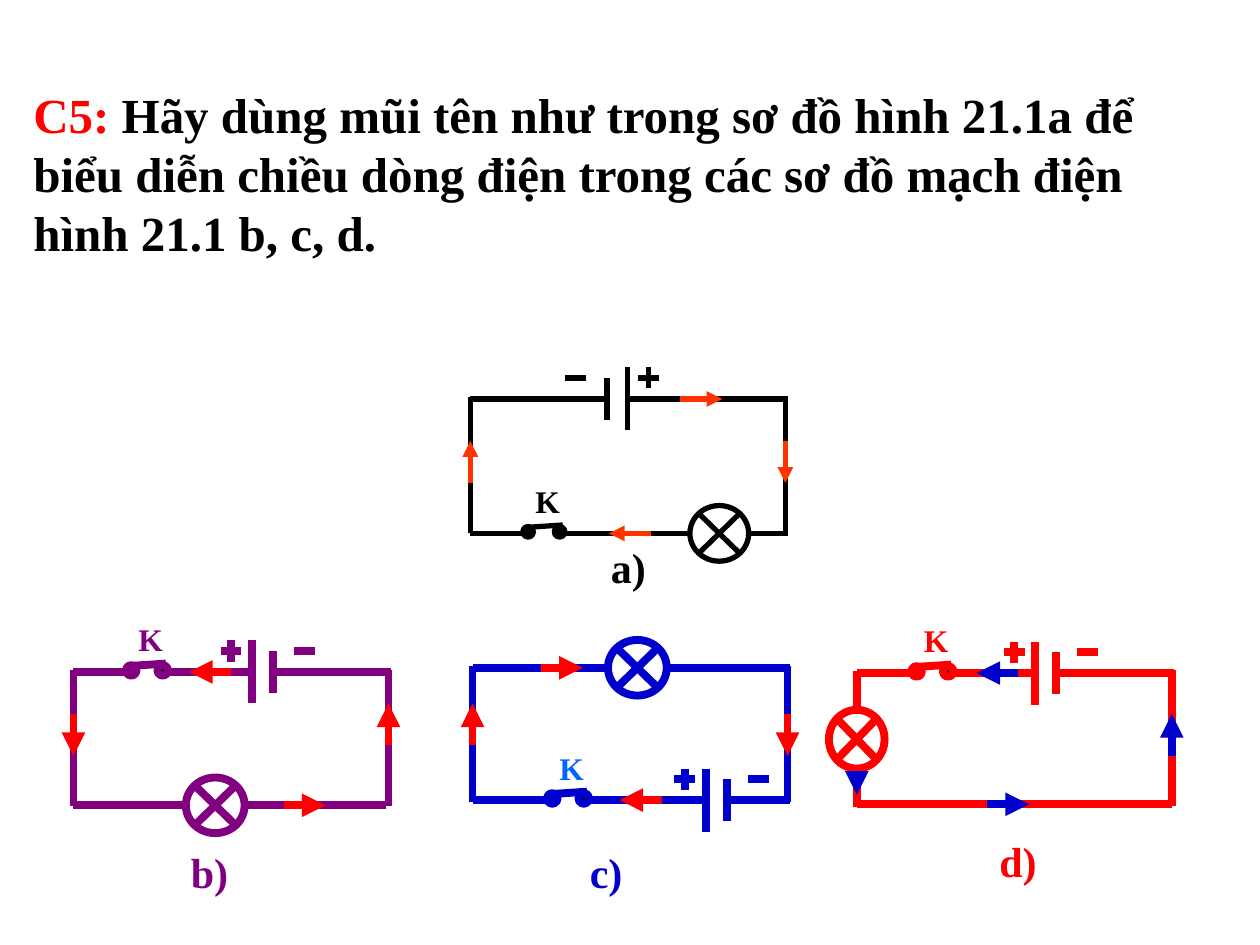
from lxml.etree import SubElement
from pptx import Presentation
from pptx.dml.color import RGBColor
from pptx.enum.shapes import MSO_CONNECTOR as Connector, MSO_SHAPE as Shape
from pptx.oxml.ns import qn
from pptx.util import Inches, Pt

# The slide is a grid of 120 columns by 90 rows, twelve to the inch.
COLUMNS, ROWS, CELLS_PER_INCH = 120, 90, 12

THEME = {
    "font": "Times New Roman",
    "black": "000000", "purple": "800080", "blue": "0000CC",
    "light blue": "0066FF", "red": "FF0000", "orange": "FF3300",
    "question size": 28, "caption size": 24, "switch size": 18,
}

QUESTION_BOX = (2, 7.5, 112, 18.1)
QUESTION = [
    ("C5: ", "red"),
    ("Hãy dùng mũi tên như trong sơ đồ hình 21.1a để biểu diễn chiều dòng điện "
     "trong các sơ đồ mạch điện hình 21.1 b, c, d.", "black"),
]

# Parts, wires and arrows lie on a side of the circuit, at a distance in cells
# from its left end (top, bottom) or from its upper end (left, right).
CIRCUIT_WIDTH = 30
CIRCUITS = [
    {"caption": "a)", "caption box": (57, 51, 6, 6), "frame": (44.8, 38, 50.8),
     "color": "black", "switch color": "black", "arrow color": "orange", "weight": 3,
     "battery": ("top", 15, "mirrored"), "lamp": ("bottom", 23.7, "level"),
     "switch": ("bottom", 6, "level"),
     "wires": [("left", 12.8, -0.2), ("top", 8, 0), ("top", 20.2, 30.2),
               ("right", 13, 0)],
     "arrows": [("bottom", 17.2, 13.2), ("right", 4, 8), ("top", 20, 24),
                ("left", 8, 4)]},
    {"caption": "b)", "caption box": (17, 80, 10, 6), "frame": (7, 64, 76.7),
     "color": "purple", "switch color": "purple", "arrow color": "red", "weight": 4.5,
     "battery": ("top", 17, "level"), "lamp": ("bottom", 13.5, "level"),
     "switch": ("top", 6, "level"),
     "wires": [("left", 12.8, -0.2), ("top", 4, 0), ("top", 20.2, 30.2),
               ("right", 12.8, -0.2), ("bottom", 29.8, 19.8), ("bottom", 0, 7)],
     "arrows": [("top", 15, 11), ("left", 4, 8), ("bottom", 20, 24),
                ("right", 7, 3)]},
    {"caption": "c)", "caption box": (55, 80, 7, 6), "frame": (45, 63.6, 76.2),
     "color": "blue", "switch color": "light blue", "arrow color": "red", "weight": 4.5,
     "battery": ("bottom", 22.2, "level"), "lamp": ("top", 15.7, "level"),
     "switch": ("bottom", 8.1, "level"),
     "wires": [("left", 12.8, -0.2), ("top", 4, 0), ("top", 20.2, 30.2),
               ("right", 12.8, -0.2), ("top", 12.2, 2.2), ("bottom", 0, 7)],
     "arrows": [("bottom", 18, 14), ("right", 4.4, 8.4), ("top", 6.5, 10.5),
                ("left", 7.4, 3.4)]},
    {"caption": "d)", "caption box": (94, 79, 6, 6), "frame": (81.6, 64.1, 76.6),
     "color": "red", "switch color": "red", "arrow color": "blue", "weight": 4.5,
     "battery": ("top", 17, "level"), "lamp": ("left", 6.3, "upright"),
     "switch": ("top", 6.2, "level"),
     "wires": [("top", 4, 0), ("top", 20.2, 30.2), ("right", 12.7, -0.3),
               ("bottom", 0, 30)],
     "arrows": [("top", 15.4, 11.4), ("left", 9.9, 11.6), ("bottom", 12.4, 16.4),
                ("right", 7.9, 3.9)]},
]

# Symbols: strokes (x1, y1, x2, y2) and dots (left, top, width, height, fill),
# in cells from the symbol's own origin on the wire.
SYMBOLS = {
    "battery": {
        "strokes": [(-3, -2, -2, -2), (-2, -2, -1, -2), (-5, 0, 0, 0), (0, -3, 0, 3),
                    (2, 0, 8, 0), (-2, -3, -2, -1), (4, -2, 6, -2), (2, -2, 2, 2)],
        "dots": []},
    "lamp": {
        "strokes": [(2.8, 0, 6.5, 0), (-6.5, 0, -2.8, 0),
                    (1.85, -1.8, -1.85, 1.8), (-1.85, -1.8, 1.85, 1.8)],
        "dots": [(-2.8, -2.65, 5.6, 5.3, None)]},
    "switch": {
        "strokes": [(-6, 0, 0, 0), (3, 0, 10, 0), (-0.2, -0.6, 2.8, -0.8)],
        "dots": [(-1, -0.65, 1, 1, "black"), (2, -0.65, 1, 1, "black")]},
}
TURNS = {
    "level": lambda x, y: (x, y),
    "mirrored": lambda x, y: (-x, y),
    "upright": lambda x, y: (y, -x),
}
SWITCH_LABEL_BOX = (-1, -5.5, 5, 4.8)  # from the switch's origin


def cells(*values):
    return [Inches(value / CELLS_PER_INCH) for value in values]


def color(name):
    return RGBColor.from_string(THEME[name])


def style_line(line, color_name, weight):
    line.color.rgb = color(color_name)
    line.width = Pt(weight)


def add_line(slide, start, end, color_name, weight, arrow=False):
    line = slide.shapes.add_connector(Connector.STRAIGHT, *cells(*start, *end))
    style_line(line.line, color_name, weight)
    properties = line._element.spPr
    if arrow:
        SubElement(properties.get_or_add_ln(), qn("a:tailEnd"), type="triangle")
    SubElement(properties, qn("a:effectLst"))


def add_dot(slide, box, fill, color_name, weight, rotation):
    dot = slide.shapes.add_shape(Shape.OVAL, *cells(*box))
    dot.shadow.inherit = False
    dot.rotation = rotation
    if fill:
        dot.fill.solid()
        dot.fill.fore_color.rgb = color(fill)
    else:
        dot.fill.background()
    style_line(dot.line, color_name, weight)


def add_text(slide, box, runs, size):
    frame = slide.shapes.add_textbox(*cells(*box)).text_frame
    frame.word_wrap = True
    for text, color_name in runs:
        run = frame.paragraphs[0].add_run()
        run.text = text
        formats = {"name": THEME["font"], "size": Pt(THEME[size]), "bold": True}
        for attribute, value in formats.items():
            setattr(run.font, attribute, value)
        run.font.color.rgb = color(color_name)


def point_on(circuit, side, distance):
    left, top, bottom = circuit["frame"]
    return {
        "top": (left + distance, top),
        "bottom": (left + distance, bottom),
        "left": (left, top + distance),
        "right": (left + CIRCUIT_WIDTH, top + distance),
    }[side]


def add_symbol(slide, circuit, name):
    side, distance, turn = circuit[name]
    origin_x, origin_y = point_on(circuit, side, distance)
    pen = circuit["color"], circuit["weight"]

    def place(x, y):
        turned_x, turned_y = TURNS[turn](x, y)
        return origin_x + turned_x, origin_y + turned_y

    for left, top, width, height, fill in SYMBOLS[name]["dots"]:
        box = origin_x + left, origin_y + top, width, height
        add_dot(slide, box, fill, *pen, rotation=270 if turn == "upright" else 0)
    for x1, y1, x2, y2 in SYMBOLS[name]["strokes"]:
        add_line(slide, place(x1, y1), place(x2, y2), *pen)


def add_circuit(slide, circuit):
    for name in SYMBOLS:
        add_symbol(slide, circuit, name)
    for kind, pen_color in (("wires", "color"), ("arrows", "arrow color")):
        for side, start, end in circuit[kind]:
            add_line(slide, point_on(circuit, side, start), point_on(circuit, side, end),
                     circuit[pen_color], circuit["weight"], arrow=kind == "arrows")
    x, y = point_on(circuit, *circuit["switch"][:2])
    left, top, width, height = SWITCH_LABEL_BOX
    add_text(slide, (x + left, y + top, width, height),
             [("K", circuit["switch color"])], "switch size")
    add_text(slide, circuit["caption box"],
             [(circuit["caption"], circuit["color"])], "caption size")


def main():
    presentation = Presentation()
    presentation.slide_width, presentation.slide_height = cells(COLUMNS, ROWS)
    slide = presentation.slides.add_slide(presentation.slide_layouts[6])
    add_text(slide, QUESTION_BOX, QUESTION, "question size")
    for circuit in CIRCUITS:
        add_circuit(slide, circuit)
    presentation.save("out.pptx")


if __name__ == "__main__":
    main()
